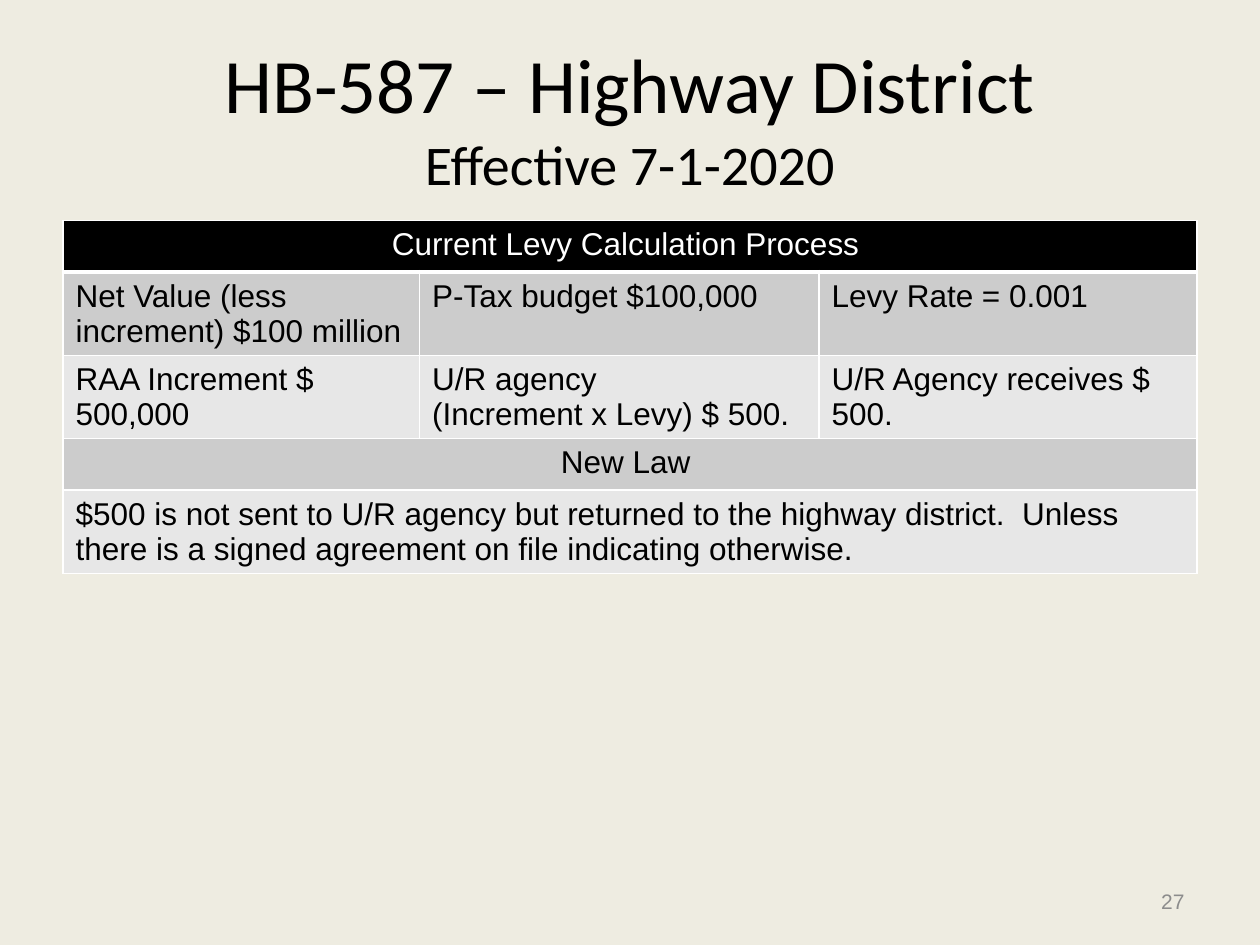
"""Build the highway district levy slide."""
from dataclasses import dataclass

from lxml import etree
from pptx import Presentation
from pptx import util as u
from pptx.dml import color as dml
from pptx.enum import text
from pptx.oxml import ns

COLORS = {
    "background": "EEECE1",
    "black": "000000",
    "white": "FFFFFF",
    "band": "CCCCCC",
    "light_band": "E7E7E7",
    "muted": "8C8C8C",
}
WIDTH, HEIGHT = u.Inches(10), u.Inches(7.5)
MARGIN = 0.05
COLUMN_INCHES = (2.83, 3.17, 3)
ROW_HEIGHT = u.Inches(0.41)
LEFT, CENTER, RIGHT = text.PP_ALIGN.LEFT, text.PP_ALIGN.CENTER, text.PP_ALIGN.RIGHT


@dataclass(frozen=True)
class Row:
    cells: tuple[str, ...]
    fill: str
    color: str = "black"
    align: text.PP_ALIGN = LEFT
    rule: float = 1


LEVY_ROWS = (
    Row(("Current Levy Calculation Process ",), "black", "white", CENTER, 3),
    Row(("Net Value (less increment) $100 million", "P-Tax budget $100,000",
         "Levy Rate = 0.001"), "band"),
    Row(("RAA Increment $ 500,000", "U/R agency\n(Increment x Levy) $ 500.",
         "U/R Agency receives $ 500."), "light_band"),
    Row(("New Law ",), "band", align=CENTER),
    Row(("$500 is not sent to U/R agency but returned to the highway district.  "
         "Unless there is a signed agreement on file indicating otherwise.",), "light_band"),
)


def rgb(name: str) -> dml.RGBColor:
    return dml.RGBColor.from_string(COLORS[name])


def write(paragraph, words: str, *, size: float = 18, font: str = "Arial",
          color: str = "black", align: text.PP_ALIGN = LEFT) -> None:
    paragraph.alignment = align
    run = paragraph.add_run()
    run.text = words
    run.font.size, run.font.name = u.Pt(size), font
    run.font.bold = False
    run.font.color.rgb = rgb(color)


def place(shape, left: float, top: float, width: float, height: float) -> None:
    shape.left, shape.width = (int(WIDTH * share) for share in (left, width))
    shape.top, shape.height = (int(HEIGHT * share) for share in (top, height))


def set_borders(cell, top: float, bottom: float) -> None:
    properties = cell._tc.get_or_add_tcPr()
    for side, points in zip("LRTB", (1, 1, top, bottom)):
        line = etree.SubElement(properties, ns.qn(f"a:ln{side}"), w=str(u.Pt(points)))
        fill = etree.SubElement(line, ns.qn("a:solidFill"))
        etree.SubElement(fill, ns.qn("a:srgbClr"), val=COLORS["white"])


def draw_title(slide) -> None:
    title = slide.shapes.title
    place(title, MARGIN, 0.04, 1 - 2 * MARGIN, 1 / 6)
    frame = title.text_frame
    frame.auto_size = text.MSO_AUTO_SIZE.NONE
    frame.vertical_anchor = text.MSO_ANCHOR.MIDDLE
    heading = frame.paragraphs[0]
    write(heading, "HB-587 – Highway District", size=44, font="Calibri", align=CENTER)
    heading.add_line_break()
    write(heading, "Effective 7-1-2020", size=32, font="Calibri", align=CENTER)


def draw_levy_table(slide, rows: tuple[Row, ...]) -> None:
    table = slide.shapes.add_table(
        len(rows), len(COLUMN_INCHES), int(WIDTH * MARGIN), u.Inches(1.75),
        int(WIDTH * (1 - 2 * MARGIN)), ROW_HEIGHT * len(rows)).table
    for column, inches in zip(table.columns, COLUMN_INCHES):
        column.width = u.Inches(inches)
    rule_above = 1
    for index, row in enumerate(rows):
        table.rows[index].height = ROW_HEIGHT
        cells = list(table.rows[index].cells)
        for cell in cells:
            set_borders(cell, rule_above, row.rule)
            cell.fill.solid()
            cell.fill.fore_color.rgb = rgb(row.fill)
        if len(row.cells) == 1:
            cells[0].merge(cells[-1])
        for cell, words in zip(cells, row.cells):
            frame = cell.text_frame
            for number, line in enumerate(words.split("\n")):
                paragraph = frame.add_paragraph() if number else frame.paragraphs[0]
                write(paragraph, line, color=row.color, align=row.align)
        rule_above = row.rule


def draw_page_number(slide, number: str) -> None:
    box = slide.shapes.add_textbox(0, 0, 0, 0)
    place(box, 0.95 - 0.233, 0.927, 0.233, 0.053)
    frame = box.text_frame
    frame.word_wrap = True
    frame.vertical_anchor = text.MSO_ANCHOR.MIDDLE
    write(frame.paragraphs[0], number, size=12, color="muted", align=RIGHT)


def main() -> None:
    deck = Presentation()
    deck.slide_width, deck.slide_height = WIDTH, HEIGHT
    slide = deck.slides.add_slide(deck.slide_layouts.get_by_name("Title Only"))
    slide.background.fill.solid()
    slide.background.fill.fore_color.rgb = rgb("background")
    draw_title(slide)
    draw_levy_table(slide, LEVY_ROWS)
    draw_page_number(slide, "27")
    deck.save("out.pptx")


if __name__ == "__main__":
    main()
